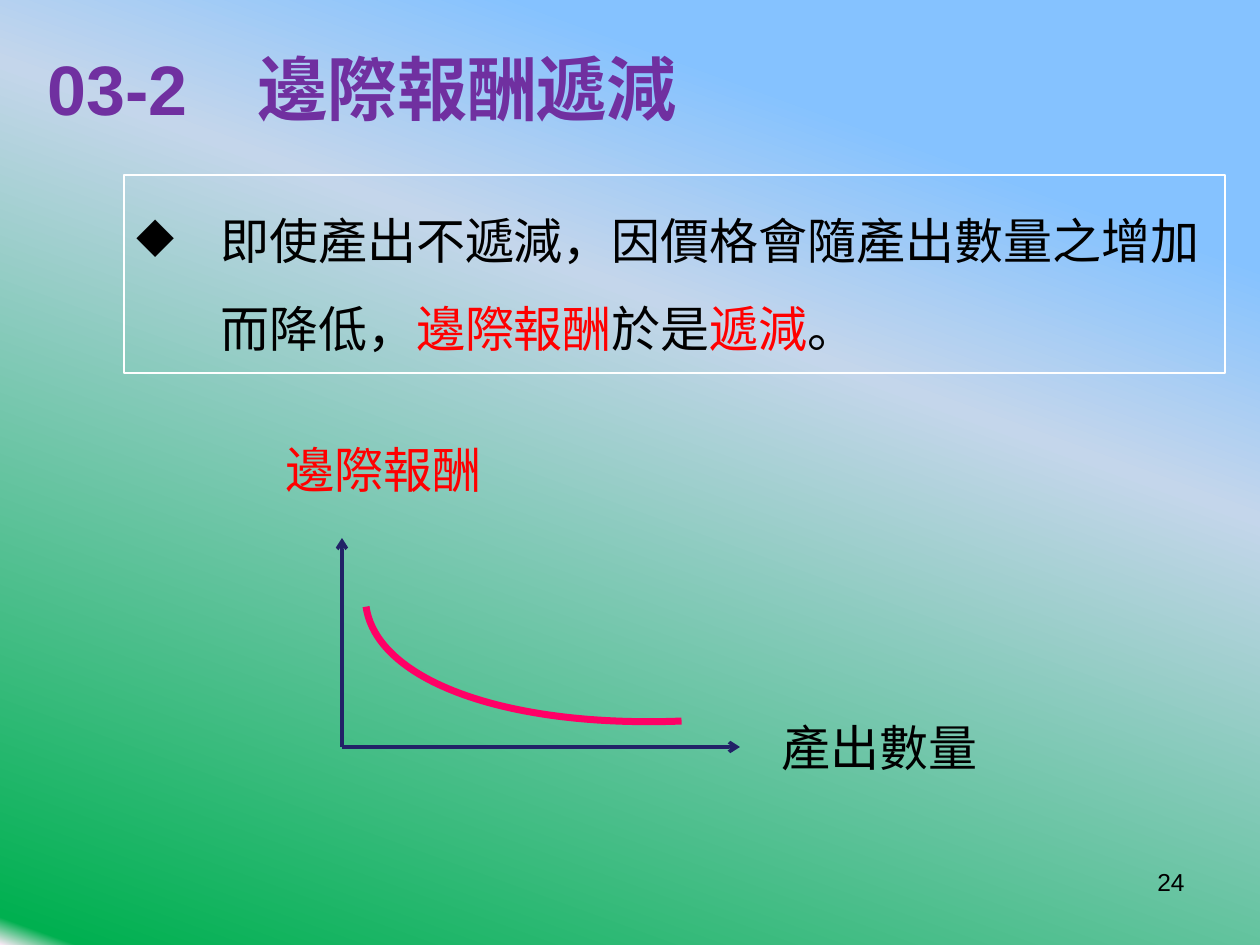
from lxml import etree
from pptx import Presentation
from pptx.dml.color import RGBColor
from pptx.enum.shapes import MSO_CONNECTOR, MSO_SHAPE
from pptx.enum.text import MSO_ANCHOR, PP_ALIGN
from pptx.oxml.ns import qn
from pptx.util import Pt

PX = 914400 / 126
FONT = "Arial"
STRAIGHT = MSO_CONNECTOR.STRAIGHT
ARC = MSO_SHAPE.ARC
TOP, MIDDLE = MSO_ANCHOR.TOP, MSO_ANCHOR.MIDDLE
LEFT, RIGHT = PP_ALIGN.LEFT, PP_ALIGN.RIGHT

COLORS = {
    "title": "7030A0",
    "text": "000000",
    "accent": "FF0000",
    "frame": "FFFFFF",
    "axis": "222267",
    "curve": "FF0066",
}
BACKGROUND = [(19, "85C2FF"), (37, "C4D6EB"), (98, "00B050"), (100, "FFEBFA")]


def emu(px):
    return round(px * PX)


def color(name):
    return RGBColor.from_string(COLORS[name])


class SlideBuilder:
    def __init__(self, slide):
        self.slide = slide

    def background(self, stops, angle):
        fill = self.slide.background.fill
        fill.gradient()
        fill.gradient_angle = 360 - angle
        stop_list = self.slide.element.find(".//" + qn("a:gsLst"))
        for old_stop in list(stop_list):
            stop_list.remove(old_stop)
        for position, hex_color in stops:
            stop = etree.SubElement(stop_list, qn("a:gs"), pos=str(position * 1000))
            etree.SubElement(stop, qn("a:srgbClr"), val=hex_color)

    def stroke(self, line, name, width):
        line.color.rgb = color(name)
        line.width = Pt(width)

    def text(self, box, runs, size, bold=False, align=LEFT, anchor=TOP, wrap=True):
        """Add a one-paragraph text box; runs are (text, colour name) pairs."""
        shape = self.slide.shapes.add_textbox(*map(emu, box))
        frame = shape.text_frame
        frame.word_wrap = wrap
        frame.vertical_anchor = anchor
        paragraph = frame.paragraphs[0]
        paragraph.alignment = align
        paragraph.font.name = FONT
        paragraph.font.size = Pt(size)
        paragraph.font.bold = bold
        for words, name in runs:
            run = paragraph.add_run()
            run.text = words
            run.font.color.rgb = color(name)
        return shape

    def framed_bullet(self, box, runs, size, indent):
        shape = self.text(box, runs, size)
        self.stroke(shape.line, "frame", 0.75)
        paragraph = shape.text_frame.paragraphs[0]
        paragraph.line_spacing = 1.5
        paragraph.space_before = Pt(size * 0.2)
        properties = paragraph.font._element.getparent()
        properties.set("marL", str(emu(indent)))
        properties.set("indent", str(-emu(indent)))
        bullet = etree.Element(qn("a:buChar"), char="◆")
        properties.find(qn("a:defRPr")).addprevious(bullet)

    def arrow(self, start, end):
        connector = self.slide.shapes.add_connector(STRAIGHT, *map(emu, start + end))
        self.stroke(connector.line, "axis", 2)
        etree.SubElement(connector.line._get_or_add_ln(), qn("a:tailEnd"), type="arrow")
        etree.SubElement(connector.element.spPr, qn("a:effectLst"))

    def arc(self, box, rotation, angles):
        shape = self.slide.shapes.add_shape(ARC, *map(emu, box))
        shape.shadow.inherit = False
        shape.fill.background()
        shape.rotation = rotation
        for index, angle in enumerate(angles):
            # One adjustment unit is 100000 / 60000 degrees
            shape.adjustments[index] = angle * 0.6
        self.stroke(shape.line, "curve", 4)


def main():
    deck = Presentation()
    deck.slide_width, deck.slide_height = emu(1260), emu(945)
    builder = SlideBuilder(deck.slides.add_slide(deck.slide_layouts[6]))
    builder.background(BACKGROUND, 110)

    # Title
    builder.text((35, 0, 1043, 175), [("03-2　邊際報酬遞減", "title")], 40,
                 bold=True, anchor=MIDDLE)

    # Statement
    statement = [
        ("即使產出不遞減，因價格會隨產出數量之增加而降低，", "text"),
        ("邊際報酬", "accent"),
        ("於是", "text"),
        ("遞減", "accent"),
        ("。", "text"),
    ]
    builder.framed_bullet((124, 175, 1101, 198), statement, 28, indent=84)

    # Page number
    builder.text((903, 861, 294, 66), [("24", "text")], 14, align=RIGHT)

    # Diminishing returns diagram
    origin = (342, 747)
    builder.arrow(origin, (342, 538))
    builder.arrow(origin, (740, 747))
    builder.arc((362, 388, 780, 326), 171.8, (300.72, 0))
    builder.text((769, 711, 223, 72), [("產出數量", "text")], 28, wrap=False)
    builder.text((273, 433, 223, 72), [("邊際報酬", "accent")], 28, wrap=False)

    deck.save("out.pptx")


if __name__ == "__main__":
    main()
